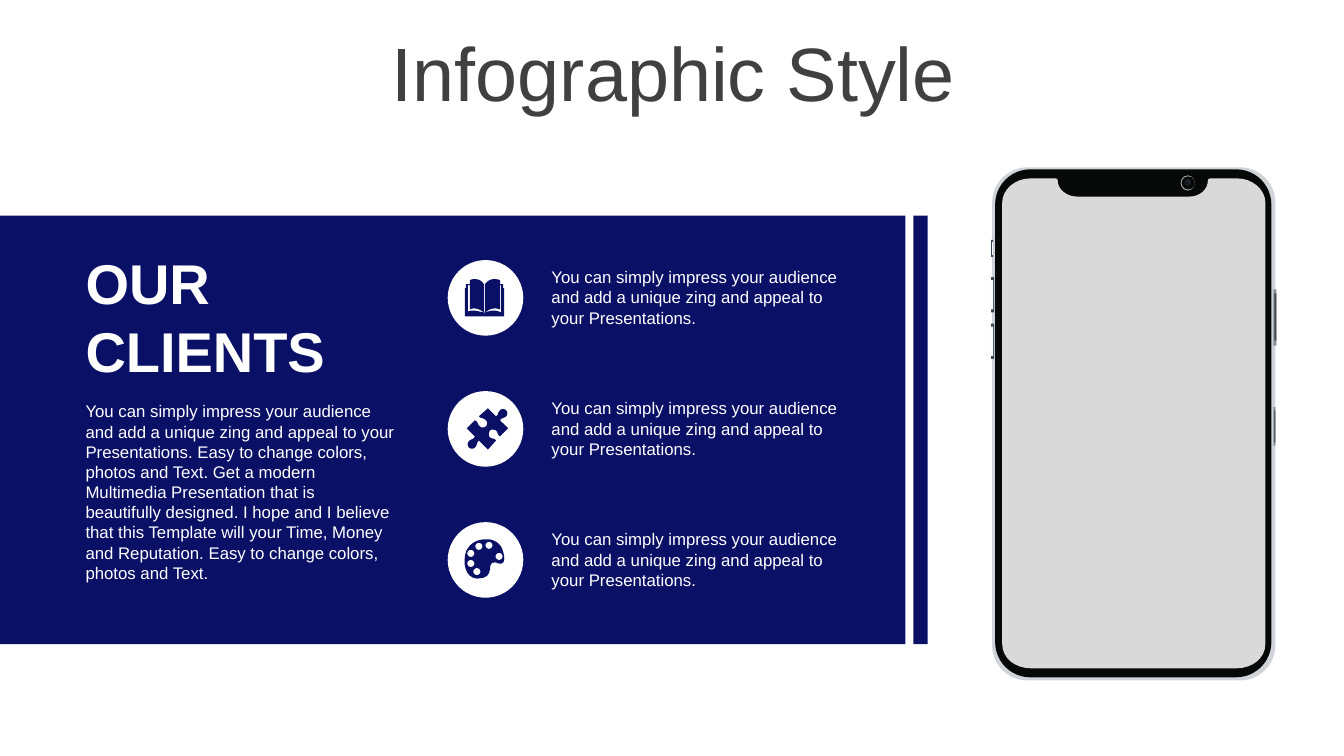
from math import cos, pi, sin

from pptx import Presentation
from pptx import util as u
from pptx.dml.color import RGBColor
from pptx.enum import shapes, text

NAVY = RGBColor(0x09, 0x10, 0x66)
WHITE = RGBColor(0xFF, 0xFF, 0xFF)
TITLE_GRAY = RGBColor(0x40, 0x40, 0x40)
FRAME_SILVER = RGBColor(0xD0, 0xD4, 0xD8)
BEZEL_BLACK = RGBColor(0x07, 0x08, 0x08)
SCREEN_GRAY = RGBColor(0xD9, 0xD9, 0xD9)
BUTTON_SLATE = RGBColor(0x36, 0x45, 0x51)
BUTTON_LIGHT = RGBColor(0xFA, 0xFD, 0xFF)
BUTTON_GRAY = RGBColor(0x8A, 0x90, 0x96)
BUTTON_DARK = RGBColor(0x4A, 0x4C, 0x4D)
LENS_RING = RGBColor(0xA6, 0xA6, 0xA6)
LENS_GRAY = RGBColor(0x26, 0x26, 0x26)
LENS_BLUE = RGBColor(0x08, 0x14, 0x22)

RECTANGLE = shapes.MSO_SHAPE.RECTANGLE
ROUNDED = shapes.MSO_SHAPE.ROUNDED_RECTANGLE
OVAL = shapes.MSO_SHAPE.OVAL

BLURB = ("You can simply impress your audience and add a unique zing "
         "and appeal to your Presentations.")
DETAILS = (BLURB + " Easy to change colors, photos and Text. Get a modern "
           "Multimedia Presentation that is beautifully designed. I hope and "
           "I believe that this Template will your Time, Money and Reputation. "
           "Easy to change colors, photos and Text.")

# Outlines: two numbers make a straight line, six make a Bézier curve.
SCREEN = [
    (12.27, 1.77), (12.01, 1.77), (11.99, 1.77, 11.98, 1.78, 11.98, 1.79),
    (11.98, 1.88, 11.9, 1.95, 11.8, 1.95), (10.68, 1.95),
    (10.58, 1.95, 10.49, 1.88, 10.49, 1.79),
    (10.49, 1.78, 10.48, 1.77, 10.47, 1.77), (10.22, 1.77),
    (10.07, 1.77, 9.94, 1.88, 9.94, 2.01), (9.94, 6.39),
    (9.94, 6.53, 10.07, 6.63, 10.22, 6.63), (12.27, 6.63),
    (12.42, 6.63, 12.55, 6.53, 12.55, 6.39), (12.55, 2.01),
    (12.55, 1.88, 12.42, 1.77, 12.27, 1.77)]
PUZZLE = [
    (5.02, 4.07), (5.03, 4.08, 5.04, 4.11, 5.02, 4.13),
    (5, 4.15, 4.98, 4.14, 4.96, 4.17), (5.04, 4.25), (4.96, 4.33),
    (4.93, 4.31, 4.94, 4.29, 4.92, 4.27), (4.9, 4.26, 4.87, 4.26, 4.86, 4.27),
    (4.85, 4.29, 4.84, 4.32, 4.86, 4.34), (4.89, 4.36, 4.89, 4.34, 4.92, 4.37),
    (4.84, 4.46), (4.75, 4.37), (4.72, 4.4, 4.74, 4.41, 4.71, 4.44),
    (4.69, 4.46, 4.66, 4.45, 4.65, 4.44), (4.64, 4.42, 4.63, 4.4, 4.65, 4.38),
    (4.67, 4.35, 4.69, 4.37, 4.71, 4.33), (4.63, 4.25), (4.71, 4.17),
    (4.75, 4.19, 4.73, 4.21, 4.76, 4.23), (4.78, 4.25, 4.8, 4.24, 4.82, 4.23),
    (4.83, 4.22, 4.84, 4.19, 4.82, 4.17), (4.79, 4.14, 4.78, 4.16, 4.75, 4.13),
    (4.84, 4.05), (4.92, 4.13), (4.95, 4.11, 4.93, 4.1, 4.96, 4.07),
    (4.98, 4.05, 5.01, 4.06, 5.02, 4.07)]
BOOK = [
    (4.8, 3.1), (4.8, 3.1, 4.81, 3.11, 4.81, 3.1),
    (4.87, 3.08, 4.91, 3.07, 4.97, 3.1), (4.97, 2.83), (4.96, 2.83), (4.96, 3.07),
    (4.91, 3.05, 4.86, 3.06, 4.81, 3.1), (4.81, 2.82),
    (4.84, 2.78, 4.87, 2.77, 4.9, 2.77), (4.92, 2.77, 4.94, 2.77, 4.96, 2.78),
    (4.96, 2.82), (4.99, 2.82), (4.99, 2.86), (5, 2.86), (5, 3.14), (4.61, 3.14),
    (4.61, 2.86), (4.62, 2.86), (4.62, 2.82), (4.66, 2.82), (4.66, 2.78),
    (4.68, 2.77, 4.69, 2.77, 4.71, 2.77), (4.75, 2.77, 4.77, 2.78, 4.8, 2.82),
    (4.8, 3.1), (4.75, 3.06, 4.7, 3.05, 4.66, 3.07), (4.66, 2.83), (4.64, 2.83),
    (4.64, 3.09), (4.7, 3.07, 4.74, 3.09, 4.8, 3.1)]
PALETTE = [
    (4.82, 5.35), (4.83, 5.35, 4.84, 5.35, 4.85, 5.35),
    (4.92, 5.36, 4.97, 5.4, 4.99, 5.47), (5.03, 5.61, 4.96, 5.6, 4.92, 5.58),
    (4.8, 5.56, 4.94, 5.74, 4.73, 5.74), (4.61, 5.73, 4.59, 5.58, 4.62, 5.48),
    (4.64, 5.42, 4.7, 5.35, 4.82, 5.35)]
PAINT_WELLS = [(4.73, 5.67), (4.67, 5.59), (4.95, 5.52),
               (4.67, 5.49), (4.75, 5.42), (4.85, 5.41)]
WELL_RADIUS = 0.035

presentation = Presentation()
presentation.slide_width = u.Inches(13.33)
presentation.slide_height = u.Inches(7.5)
slide = presentation.slides.add_slide(presentation.slide_layouts[5])


def write(shape, content, size=12, color=WHITE, bold=False, before=0,
          align=text.PP_ALIGN.LEFT, anchor=text.MSO_ANCHOR.TOP, spacing=None):
    frame = shape.text_frame
    frame.word_wrap = True
    frame.auto_size = text.MSO_AUTO_SIZE.NONE
    frame.vertical_anchor = anchor
    frame.text = content
    for paragraph in frame.paragraphs:
        paragraph.alignment = align
        paragraph.space_before = u.Pt(before)
        paragraph.line_spacing = spacing
        font = paragraph.runs[0].font
        font.name, font.size, font.bold = "Arial", u.Pt(size), bold
        font.color.rgb = color
    return frame


def flatten(outline, steps=8):
    """Turn lines and Bézier curves into a list of EMU points."""
    points = [outline[0]]
    for segment in outline[1:]:
        if len(segment) == 2:
            points.append(segment)
            continue
        x0, y0 = points[-1]
        x1, y1, x2, y2, x3, y3 = segment
        for step in range(1, steps + 1):
            t = step / steps
            a, b, c, d = (1 - t) ** 3, 3 * t * (1 - t) ** 2, 3 * t * t * (1 - t), t ** 3
            points.append((a * x0 + b * x1 + c * x2 + d * x3,
                           a * y0 + b * y1 + c * y2 + d * y3))
    return [(u.Inches(x), u.Inches(y)) for x, y in points]


# Panel, phone body and icon discs
blocks = [
    (RECTANGLE, 0, 2.14, 8.98, 4.25, NAVY),
    (RECTANGLE, 9.06, 2.14, 0.14, 4.25, NAVY),
    (ROUNDED, 9.84, 1.66, 2.81, 5.09, FRAME_SILVER),
    (ROUNDED, 9.87, 1.68, 2.74, 5.04, BEZEL_BLACK),
    (RECTANGLE, 9.83, 2.38, 0.02, 0.17, BUTTON_SLATE),
    (RECTANGLE, 9.84, 2.4, 0.01, 0.13, BUTTON_LIGHT),
    (RECTANGLE, 12.63, 2.87, 0.03, 0.56, BUTTON_GRAY),
    (RECTANGLE, 12.64, 2.91, 0.02, 0.47, BUTTON_DARK),
    (RECTANGLE, 12.63, 4.04, 0.02, 0.38, BUTTON_GRAY),
    (RECTANGLE, 12.64, 4.07, 0.01, 0.32, BUTTON_DARK),
    (OVAL, 11.71, 1.74, 0.14, 0.15, LENS_RING),
    (OVAL, 11.72, 1.75, 0.13, 0.13, BEZEL_BLACK),
    (OVAL, 11.75, 1.78, 0.06, 0.06, LENS_GRAY),
    (OVAL, 11.76, 1.8, 0.03, 0.03, LENS_BLUE),
]
for top in (2.75, 3.21):
    blocks += [(RECTANGLE, 9.83, top, 0.03, 0.35, BUTTON_SLATE),
               (RECTANGLE, 9.83, top + 0.03, 0.02, 0.29, BUTTON_LIGHT)]
row_tops = [2.58 + 1.3 * row for row in range(3)]
blocks += [(OVAL, 4.44, top, 0.75, 0.75, WHITE) for top in row_tops]

for kind, left, top, width, height, color in blocks:
    block = slide.shapes.add_shape(kind, *map(u.Inches, (left, top, width, height)))
    if kind == ROUNDED:
        block.adjustments[0] = 0.35 / width
    block.shadow.inherit = False
    block.fill.solid()
    block.fill.fore_color.rgb = color
    block.line.fill.background()

# Phone screen and icons
wells = [[(x + WELL_RADIUS * cos(i * pi / 12), y + WELL_RADIUS * sin(i * pi / 12))
          for i in range(24)] for x, y in PAINT_WELLS]
for outlines, color in (([SCREEN], SCREEN_GRAY), ([PUZZLE], NAVY),
                        ([BOOK], NAVY), ([PALETTE] + wells, NAVY)):
    start, *rest = flatten(outlines[0])
    builder = slide.shapes.build_freeform(*start)
    builder.add_line_segments(rest)
    for outline in outlines[1:]:
        start, *rest = flatten(outline)
        builder.move_to(*start)
        builder.add_line_segments(rest)
    drawing = builder.convert_to_shape()
    drawing.shadow.inherit = False
    drawing.fill.solid()
    drawing.fill.fore_color.rgb = color
    drawing.line.fill.background()

# Wording
title = slide.shapes.title
title.left, title.top, title.width, title.height = map(u.Inches, (0.35, 0.37, 12.66, 0.79))
write(title, "Infographic Style", size=54, color=TITLE_GRAY, before=10, spacing=0.9,
      align=text.PP_ALIGN.CENTER, anchor=text.MSO_ANCHOR.MIDDLE)

for top in row_tops:
    box = slide.shapes.add_textbox(*map(u.Inches, (5.35, top + 0.02, 3.17, 0.71)))
    write(box, BLURB, before=2.4).margin_left = u.Inches(0.12)

heading = slide.shapes.add_textbox(*map(u.Inches, (0.75, 2.42, 3.43, 1.45)))
write(heading, "OUR\nCLIENTS", size=40, bold=True)
details = slide.shapes.add_textbox(*map(u.Inches, (0.75, 3.93, 3.27, 1.92)))
write(details, DETAILS)

presentation.save("out.pptx")
